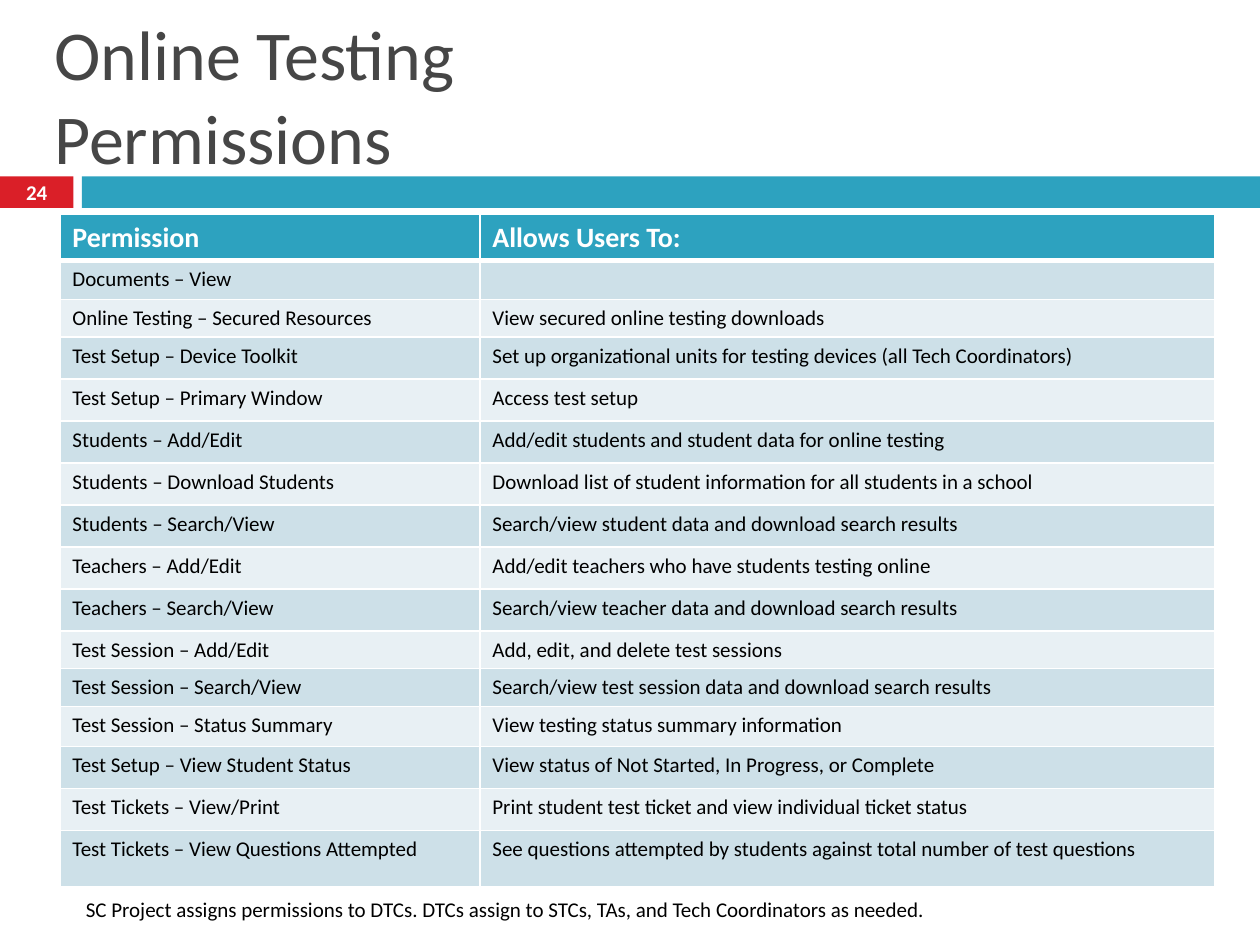
from dataclasses import dataclass

from lxml import etree
from pptx import Presentation
from pptx.dml.color import RGBColor
from pptx.enum.shapes import MSO_SHAPE
from pptx.enum.text import MSO_ANCHOR, PP_ALIGN
from pptx.oxml.ns import qn
from pptx.util import Inches, Pt

RECTANGLE = MSO_SHAPE.RECTANGLE
TOP, MIDDLE = MSO_ANCHOR.TOP, MSO_ANCHOR.MIDDLE
LEFT, CENTER = PP_ALIGN.LEFT, PP_ALIGN.CENTER

SLIDE_COLUMNS, SLIDE_ROWS = 120, 90
BLANK_LAYOUT = 6


@dataclass(frozen=True)
class Theme:
    font: str = "Calibri"
    red: str = "DA1F28"
    teal: str = "2DA2BF"
    gray: str = "464646"
    white: str = "FFFFFF"
    black: str = "000000"
    bands: tuple = ("CDE0E8", "E8F0F4")
    title_size: int = 40
    header_size: int = 16
    body_size: int = 12
    thin_border: int = 1
    thick_border: int = 3


PERMISSIONS = [
    ("Permission", "Allows Users To:"),
    ("Documents – View", ""),
    ("Online Testing – Secured Resources", "View secured online testing downloads"),
    ("Test Setup – Device Toolkit",
     "Set up organizational units for testing devices (all Tech Coordinators)"),
    ("Test Setup – Primary Window", "Access test setup"),
    ("Students – Add/Edit", "Add/edit students and student data for online testing"),
    ("Students – Download Students",
     "Download list of student information for all students in a school"),
    ("Students – Search/View", "Search/view student data and download search results"),
    ("Teachers – Add/Edit", "Add/edit teachers who have students testing online"),
    ("Teachers – Search/View", "Search/view teacher data and download search results"),
    ("Test Session – Add/Edit", "Add, edit, and delete test sessions"),
    ("Test Session – Search/View",
     "Search/view test session data and download search results"),
    ("Test Session – Status Summary", "View testing status summary information"),
    ("Test Setup – View Student Status",
     "View status of Not Started, In Progress, or Complete"),
    ("Test Tickets – View/Print",
     "Print student test ticket and view individual ticket status"),
    ("Test Tickets – View Questions Attempted",
     "See questions attempted by students against total number of test questions"),
]
COLUMN_WIDTHS = [40, 70]
ROW_HEIGHTS = [4.3, 3.7, 3.6] + [4] * 7 + [3.6, 3.6, 3.8, 4, 4, 5.4]


class SlideBuilder:
    """Draws on one slide, with lengths in grid units of a twelfth of an inch."""

    def __init__(self, presentation, theme):
        self.theme = theme
        self.unit = presentation.slide_width / SLIDE_COLUMNS
        layout = presentation.slide_layouts[BLANK_LAYOUT]
        self.slide = presentation.slides.add_slide(layout)

    def grid(self, *lengths):
        return [round(length * self.unit) for length in lengths]

    def bar(self, left, top, width, height, color):
        box = self.grid(left, top, width, height)
        shape = self.slide.shapes.add_shape(RECTANGLE, *box)
        shape.shadow.inherit = False
        shape.fill.solid()
        shape.fill.fore_color.rgb = RGBColor.from_string(color)
        shape.line.fill.background()

    def fill_text(self, frame, text, size, color, bold=False, align=LEFT):
        frame.text = text
        paragraph = frame.paragraphs[0]
        paragraph.alignment = align
        for run in paragraph.runs:
            formats = {"name": self.theme.font, "size": Pt(size), "bold": bold}
            for name, value in formats.items():
                setattr(run.font, name, value)
            run.font.color.rgb = RGBColor.from_string(color)
        if not text:
            # An empty cell keeps its row low only through its end mark's size.
            etree.SubElement(paragraph._p, qn("a:endParaRPr"), sz=str(size * 100))

    def text(self, left, top, width, height, text, anchor=TOP, **style):
        box = self.grid(left, top, width, height)
        frame = self.slide.shapes.add_textbox(*box).text_frame
        frame.word_wrap = True
        frame.vertical_anchor = anchor
        self.fill_text(frame, text, **style)

    def borders(self, cell, widths):
        properties = cell._tc.get_or_add_tcPr()
        for side, width in widths.items():
            line = etree.SubElement(properties, qn(f"a:ln{side}"), w=str(Pt(width)))
            fill = etree.SubElement(line, qn("a:solidFill"))
            etree.SubElement(fill, qn("a:srgbClr"), val=self.theme.white)

    def table(self, left, top, column_widths, row_heights, rows):
        theme = self.theme
        box = self.grid(left, top, sum(column_widths), sum(row_heights))
        table = self.slide.shapes.add_table(len(rows), len(column_widths), *box).table
        for column, width in zip(table.columns, self.grid(*column_widths)):
            column.width = width
        for row, height in zip(table.rows, self.grid(*row_heights)):
            row.height = height

        header_style = {"size": theme.header_size, "color": theme.white, "bold": True}
        body_style = {"size": theme.body_size, "color": theme.black}
        for row_index, texts in enumerate(rows):
            is_header = row_index == 0
            fill = theme.teal if is_header else theme.bands[(row_index - 1) % 2]
            widths = dict.fromkeys("LRTB", theme.thin_border)
            if row_index < 2:
                widths["B" if is_header else "T"] = theme.thick_border
            for column_index, text in enumerate(texts):
                cell = table.cell(row_index, column_index)
                self.borders(cell, widths)
                cell.fill.solid()
                cell.fill.fore_color.rgb = RGBColor.from_string(fill)
                self.fill_text(cell.text_frame, text,
                               **(header_style if is_header else body_style))


def main():
    theme = Theme()
    presentation = Presentation()
    presentation.slide_width = Inches(SLIDE_COLUMNS / 12)
    presentation.slide_height = Inches(SLIDE_ROWS / 12)

    builder = SlideBuilder(presentation, theme)
    builder.bar(0, 16.8, 7, 3, theme.red)
    builder.bar(7.8, 16.8, SLIDE_COLUMNS - 7.8, 3, theme.teal)
    builder.text(4, 4, 112, 10, "Online Testing\vPermissions", anchor=MIDDLE,
                 size=theme.title_size, color=theme.gray)
    builder.text(0, 16.7, 7, 3.2, "24", anchor=MIDDLE, size=theme.body_size,
                 color=theme.white, bold=True, align=CENTER)
    builder.table(5.7, 20.4, COLUMN_WIDTHS, ROW_HEIGHTS, PERMISSIONS)
    builder.text(7, 84.8, 107, 3.6,
                 "SC Project assigns permissions to DTCs. DTCs assign to STCs, "
                 "TAs, and Tech Coordinators as needed.",
                 size=theme.body_size, color=theme.black)
    presentation.save("out.pptx")


if __name__ == "__main__":
    main()
